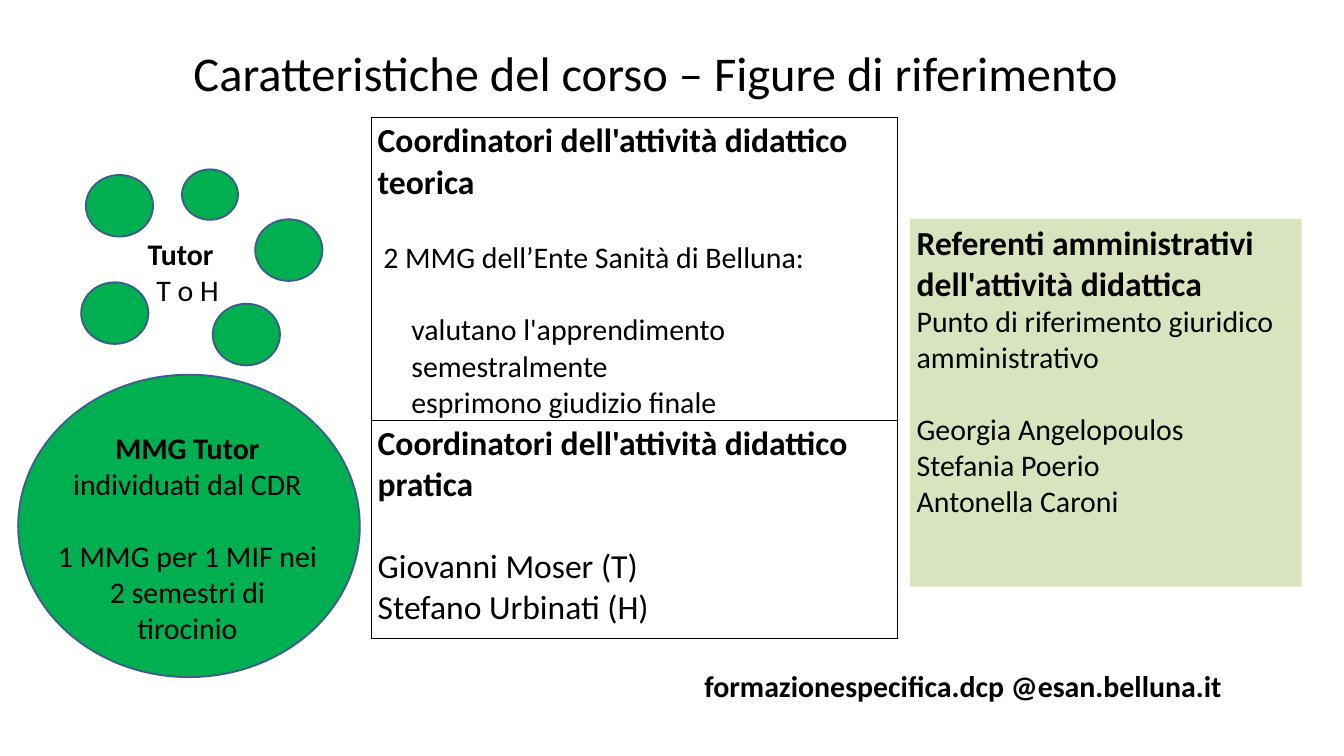
from lxml.etree import SubElement
from pptx import Presentation
from pptx.dml.color import RGBColor
from pptx.enum.shapes import MSO_SHAPE as Shape
from pptx.enum.text import MSO_ANCHOR as Anchor, PP_ALIGN as Align
from pptx.oxml.ns import qn
from pptx.util import Pt

BLACK = RGBColor(0x00, 0x00, 0x00)
GREEN = RGBColor(0x00, 0xB0, 0x50)
OUTLINE = RGBColor(0x3A, 0x5F, 0x8B)
PALE_GREEN = RGBColor(0xD7, 0xE4, 0xBD)
FONT = "Calibri"
TITLE, HEADING, BODY = 52, 36, 32


def write(frame, lines, align=Align.LEFT):
    """Fill a frame with (text, size, bold, space before, left indent, right indent) lines."""
    frame.word_wrap = True
    for number, (text, size, bold, *spacing) in enumerate(lines):
        before, left, right = (spacing + [0, 0, 0])[:3]
        paragraph = frame.add_paragraph() if number else frame.paragraphs[0]
        paragraph.text = text
        paragraph.alignment = align
        paragraph.space_before = Pt(before)
        properties = paragraph._p.get_or_add_pPr()
        properties.set("marL", str(Pt(left)))
        properties.set("marR", str(Pt(right)))
        for run in paragraph.runs:
            run.font.name = FONT
            run.font.size = Pt(size)
            run.font.bold = bold
            run.font.color.rgb = BLACK


def add_text(slide, left, top, width, height, lines, align=Align.LEFT):
    box = slide.shapes.add_textbox(Pt(left), Pt(top), Pt(width), Pt(height))
    write(box.text_frame, lines, align)
    return box


def add_circle(slide, left, top, width, height):
    circle = slide.shapes.add_shape(Shape.OVAL, Pt(left), Pt(top), Pt(width), Pt(height))
    circle.shadow.inherit = False
    circle.fill.solid()
    circle.fill.fore_color.rgb = GREEN
    circle.line.color.rgb = OUTLINE
    circle.line.width = Pt(2)


def add_title(slide, left, top, width, height):
    box = add_text(slide, left, top, width, height,
                   [("Caratteristiche del corso – Figure di riferimento", TITLE, False)],
                   Align.CENTER)
    frame = box.text_frame
    frame.margin_left = frame.margin_right = frame.margin_top = frame.margin_bottom = 0


def add_tutor_group(slide, left, top):
    """Small circles scattered around the tutor label."""
    for x, y in ((0, 121), (141, 144), (186.5, 53.5), (5, 6)):
        add_circle(slide, left + x, top + y, 72, 66)
    add_circle(slide, left + 108, top, 60, 54)
    add_text(slide, left + 33, top + 67.5, 162, 71,
             [("Tutor", BODY, True, 0, 0, 15), ("T o H", BODY, False)], Align.CENTER)


def add_tutor_circle(slide, left, top, width, height):
    add_circle(slide, left, top, width, height)
    add_text(slide, left + 34.5, top + 55.5, 293.8, 199.5, [
        ("MMG Tutor", BODY, True),
        ("individuati dal CDR", BODY, False),
        ("1 MMG per 1 MIF nei 2 semestri di tirocinio", BODY, False, 39),
    ], Align.CENTER)


def add_borders(cell):
    properties = cell._tc.get_or_add_tcPr()
    for side in ("lnL", "lnR", "lnT", "lnB"):
        line = SubElement(properties, qn(f"a:{side}"), w=str(Pt(1)))
        fill = SubElement(line, qn("a:solidFill"))
        SubElement(fill, qn("a:srgbClr"), val=str(BLACK))


def add_coordinators(slide, left, top, width, row_heights):
    rows = (
        [("Coordinatori dell'attività didattico teorica", HEADING, True),
         ("2 MMG dell’Ente Sanità di Belluna:", BODY, False, 39, 6),
         ("valutano l'apprendimento semestralmente", BODY, False, 39, 36),
         ("esprimono giudizio finale", BODY, False, 0, 36)],
        [("Coordinatori dell'attività didattico pratica", HEADING, True),
         ("Giovanni Moser (T)", HEADING, False, 44),
         ("Stefano Urbinati (H)", HEADING, False)],
    )
    table = slide.shapes.add_table(len(rows), 1, Pt(left), Pt(top), Pt(width),
                                   Pt(sum(row_heights))).table
    table.first_row = table.horz_banding = False
    for number, (lines, height) in enumerate(zip(rows, row_heights)):
        table.rows[number].height = Pt(height)
        cell = table.cell(number, 0)
        cell.margin_bottom = 0
        add_borders(cell)
        cell.fill.background()
        write(cell.text_frame, lines)


def add_administrators(slide, left, top, width, height):
    panel = slide.shapes.add_shape(Shape.RECTANGLE, Pt(left), Pt(top), Pt(width), Pt(height))
    panel.shadow.inherit = False
    panel.fill.solid()
    panel.fill.fore_color.rgb = PALE_GREEN
    panel.line.fill.background()
    panel.text_frame.vertical_anchor = Anchor.TOP
    write(panel.text_frame, [
        ("Referenti amministrativi dell'attività didattica", HEADING, True),
        ("Punto di riferimento giuridico amministrativo", BODY, False),
        ("Georgia Angelopoulos", BODY, False, 39),
        ("Stefania Poerio", BODY, False),
        ("Antonella Caroni", BODY, False),
    ])


def main():
    presentation = Presentation()
    presentation.slide_width, presentation.slide_height = Pt(1440), Pt(810)
    slide = presentation.slides.add_slide(presentation.slide_layouts[6])
    add_title(slide, 67, 46, 1271, 52)
    add_tutor_circle(slide, 19.5, 401.5, 366, 324)
    add_coordinators(slide, 397.5, 126, 564.5, (324, 234))
    add_administrators(slide, 975, 234.5, 419.5, 394)
    add_tutor_group(slide, 87, 181.5)
    add_text(slide, 747.5, 712, 646.5, 46,
             [("formazionespecifica.dcp @esan.belluna.it", BODY, True)])
    presentation.save("out.pptx")


if __name__ == "__main__":
    main()
